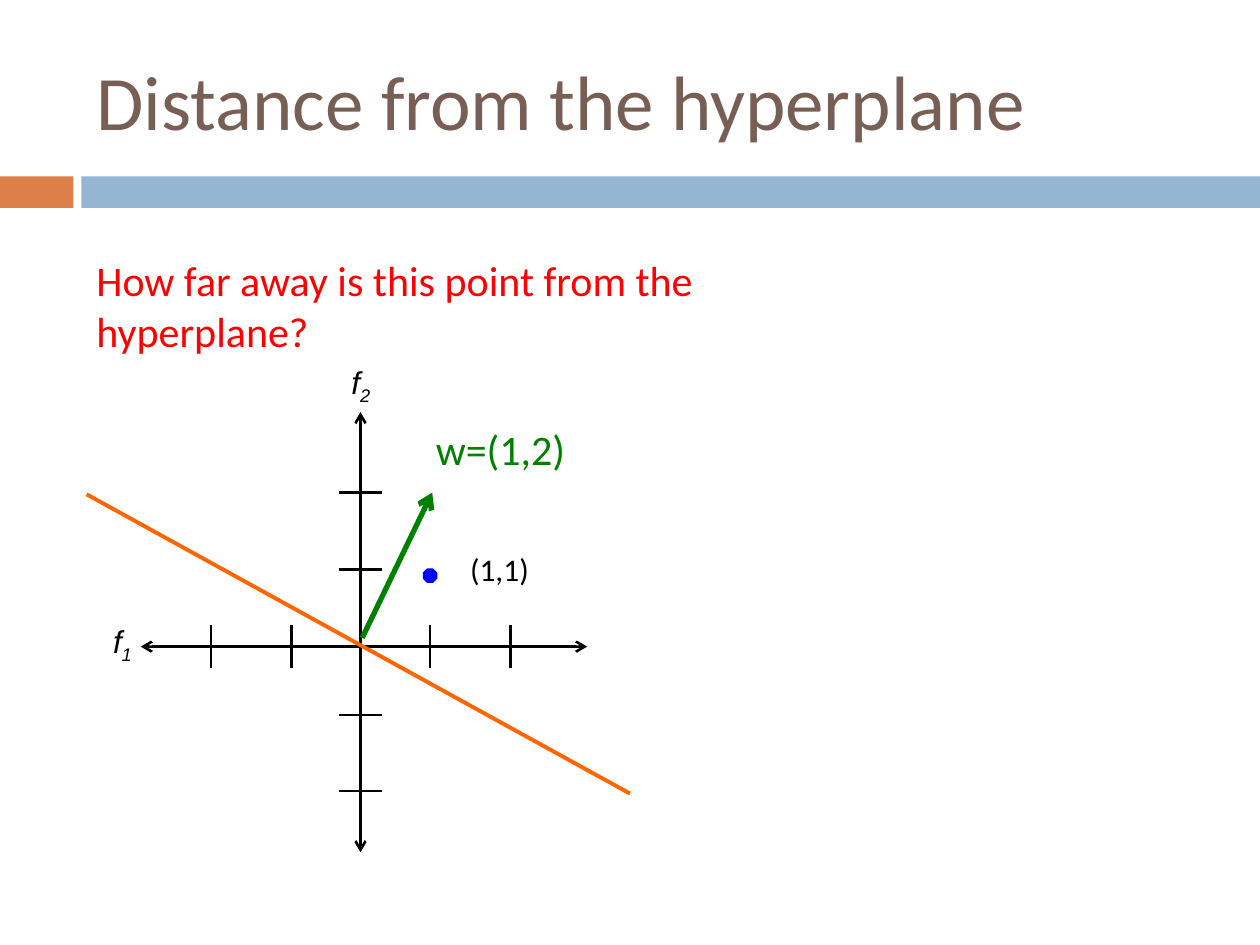
import pptx
import pptx.util
import pptx.dml.color
import pptx.enum.shapes
import pptx.enum.text
import pptx.oxml.ns
import lxml.etree

Pt = pptx.util.Pt
RGB = pptx.dml.color.RGBColor
SHAPE = pptx.enum.shapes.MSO_SHAPE

ORANGE = RGB(0xDD, 0x80, 0x47)
LIGHT_BLUE = RGB(0x94, 0xB6, 0xD2)
BROWN = RGB(0x77, 0x5F, 0x55)
BLACK = RGB(0, 0, 0)
HYPERPLANE = RGB(0xFF, 0x66, 0)
GREEN = RGB(0, 0x80, 0)
BLUE = RGB(0, 0, 0xFF)
RED = RGB(0xFF, 0, 0)

ORIGIN_X, ORIGIN_Y = 206, 369.5
TICK = 12.25


def add_run(p, text, size, color, font="Calibri", italic=False, baseline=None):
    r = p.add_run()
    r.text = text
    r.font.size = Pt(size)
    r.font.name = font
    r.font.italic = italic
    r.font.color.rgb = color
    if baseline is not None:
        r.font._element.set("baseline", str(baseline))


def set_title(s, text):
    sp = s.shapes.title
    sp.left, sp.top, sp.width, sp.height = Pt(48), Pt(18), Pt(642), Pt(78)
    tf = sp.text_frame
    tf.vertical_anchor = pptx.enum.text.MSO_ANCHOR.MIDDLE
    p = tf.paragraphs[0]
    p.alignment = pptx.enum.text.PP_ALIGN.LEFT
    add_run(p, text, 44, BROWN)


def add_text(s, x, y, w, h, wrap=False):
    tf = s.shapes.add_textbox(Pt(x), Pt(y), Pt(w), Pt(h)).text_frame
    tf.word_wrap = wrap
    return tf.paragraphs[0]


def add_axis_label(s, x, y, index):
    p = add_text(s, x, y, 29.5, 29)
    add_run(p, "f", 18, BLACK, "Arial", True)
    add_run(p, index, 18, BLACK, "Arial", True, -25000)


def add_solid(s, kind, x, y, w, h, color):
    sp = s.shapes.add_shape(kind, Pt(x), Pt(y), Pt(w), Pt(h))
    sp.shadow.inherit = False
    sp.fill.solid()
    sp.fill.fore_color.rgb = color
    sp.line.fill.background()
    return sp


def add_line(shapes, x1, y1, x2, y2, color=BLACK, width=1.5, arrows=()):
    c = shapes.add_connector(pptx.enum.shapes.MSO_CONNECTOR.STRAIGHT,
                             Pt(x1), Pt(y1), Pt(x2), Pt(y2))
    c.line.color.rgb = color
    c.line.width = Pt(width)
    qn = pptx.oxml.ns.qn
    ln = c.line._get_or_add_ln()
    for end in arrows:
        lxml.etree.SubElement(ln, qn("a:" + end)).set("type", "arrow")
    lxml.etree.SubElement(c._element.spPr, qn("a:effectLst"))


def add_axes(s):
    shapes = s.shapes.add_group_shape().shapes
    both = ("headEnd", "tailEnd")
    add_line(shapes, ORIGIN_X, 487, ORIGIN_X, 235.5, arrows=both)
    add_line(shapes, 80.5, ORIGIN_Y, 335.5, ORIGIN_Y, arrows=both)
    for y in (281.5, 325.5, 408.5, 452):
        add_line(shapes, ORIGIN_X - TICK, y, ORIGIN_X + TICK, y)
    for x in (120.5, 166.75, 245.75, 291.75):
        add_line(shapes, x, ORIGIN_Y - TICK, x, ORIGIN_Y + TICK)


def main():
    prs = pptx.Presentation()
    prs.slide_width, prs.slide_height = Pt(720), Pt(540)
    s = prs.slides.add_slide(prs.slide_layouts[5])

    add_solid(s, SHAPE.RECTANGLE, 0, 100.8, 42, 18, ORANGE)
    add_solid(s, SHAPE.RECTANGLE, 46.5, 100.8, 673.5, 18, LIGHT_BLUE)
    set_title(s, "Distance from the hyperplane")

    add_axes(s)
    add_line(s.shapes, 49.5, 282.5, 360, 453.5, HYPERPLANE, 2.25)
    add_line(s.shapes, 207, 364.5, 247, 281.5, GREEN, 3, ("tailEnd",))

    add_axis_label(s, 57.5, 352, "1")
    add_axis_label(s, 193.75, 204, "2")

    point = add_solid(s, SHAPE.OCTAGON, 242, 325.2, 7.5, 7.5, BLUE)
    point.line.color.rgb = BLUE
    point.line.width = Pt(0.75)

    add_run(add_text(s, 261.5, 311, 48, 29), "(1,1)", 18, BLACK)
    add_run(add_text(s, 48, 142, 470, 36, True),
            "How far away is this point from the hyperplane?", 24, RED)
    add_run(add_text(s, 242, 238.5, 92, 36), "w=(1,2)", 24, GREEN)

    prs.save("out.pptx")


if __name__ == "__main__":
    main()
